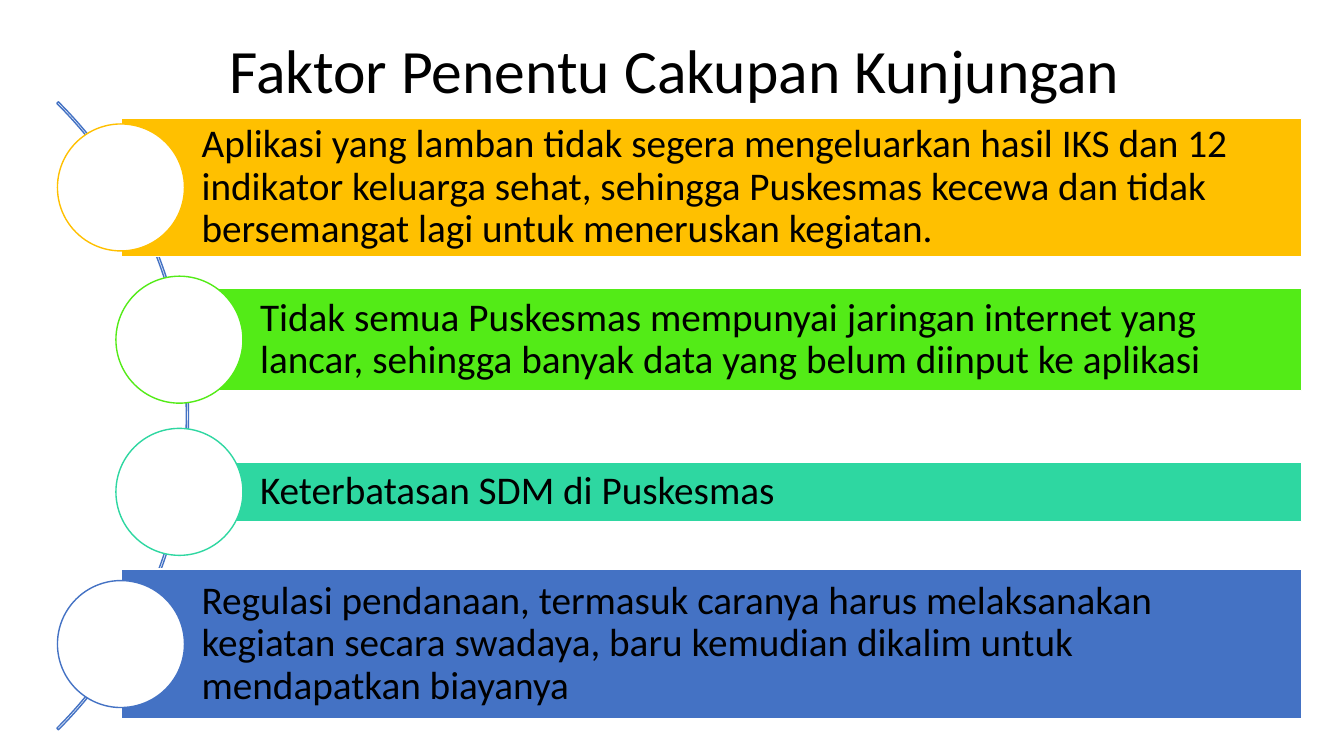
from pptx import Presentation
from pptx.dml.color import RGBColor
from pptx.enum import shapes, text
from pptx.util import Inches, Pt

BLACK = RGBColor(0x00, 0x00, 0x00)
WHITE = RGBColor(0xFF, 0xFF, 0xFF)
GOLD = RGBColor(0xFF, 0xC0, 0x00)
GREEN = RGBColor(0x53, 0xEB, 0x17)
TEAL = RGBColor(0x2E, 0xD7, 0xA1)
BLUE = RGBColor(0x44, 0x72, 0xC4)

BAR_RIGHT = 12.91
CIRCLE = 1.26
FIRST_Y, PITCH = 1.86, 1.51

# Colour, centre x of the circle, bar height, wording
FACTORS = [
    (GOLD, 1.2, 1.37,
     "Aplikasi yang lamban tidak segera mengeluarkan hasil IKS dan 12 indikator "
     "keluarga sehat, sehingga Puskesmas kecewa dan tidak bersemangat lagi untuk "
     "meneruskan kegiatan."),
    (GREEN, 1.78, 1.01,
     "Tidak semua Puskesmas mempunyai jaringan internet yang lancar, sehingga "
     "banyak data yang belum diinput ke aplikasi"),
    (TEAL, 1.78, 0.59, "Keterbatasan SDM di Puskesmas"),
    (BLUE, 1.2, 1.49,
     "Regulasi pendanaan, termasuk caranya harus melaksanakan kegiatan secara "
     "swadaya, baru kemudian dikalim untuk mendapatkan biayanya"),
]


def write(sp, wording, size, align, left=0.1, inset=0.1):
    tf = sp.text_frame
    tf.word_wrap = True
    tf.vertical_anchor = text.MSO_ANCHOR.MIDDLE
    tf.margin_left = Inches(left)
    tf.margin_right = tf.margin_top = tf.margin_bottom = Inches(inset)
    p = tf.paragraphs[0]
    p.alignment = align
    p.line_spacing = 0.9
    r = p.add_run()
    r.text = wording
    r.font.name = "Calibri"
    r.font.size = Pt(size)
    r.font.color.rgb = BLACK


def add_outlined(slide, kind, left, top, width, height, line, fill=None):
    sp = slide.shapes.add_shape(
        kind, Inches(left), Inches(top), Inches(width), Inches(height))
    sp.shadow.inherit = False
    if fill is None:
        sp.fill.background()
    else:
        sp.fill.solid()
        sp.fill.fore_color.rgb = fill
    sp.line.color.rgb = line
    sp.line.width = Pt(1)
    return sp


def add_title(slide, left, top, width, height):
    sp = slide.shapes.add_textbox(
        Inches(left), Inches(top), Inches(width), Inches(height))
    write(sp, "Faktor Penentu Cakupan Kunjungan", 44,
          text.PP_ALIGN.CENTER, inset=0.05)


def add_arc(slide, left, top, size):
    """Thin arc from 315 to 45 degrees that links the circles."""
    sp = add_outlined(slide, shapes.MSO_SHAPE.BLOCK_ARC,
                      left, top, size, size, BLUE)
    for i, value in enumerate((189, 27, 0.0025)):
        sp.adjustments[i] = value


def add_factor(slide, x, y, height, color, wording):
    """Bar with a circle centred on its left edge, at (x, y)."""
    bar = add_outlined(slide, shapes.MSO_SHAPE.RECTANGLE, x, y - height / 2,
                       BAR_RIGHT - x, height, WHITE, color)
    write(bar, wording, 28, text.PP_ALIGN.LEFT, left=0.8, inset=0.08)
    add_outlined(slide, shapes.MSO_SHAPE.OVAL, x - CIRCLE / 2, y - CIRCLE / 2,
                 CIRCLE, CIRCLE, color, WHITE)


def main():
    prs = Presentation()
    prs.slide_width, prs.slide_height = Inches(13.33), Inches(7.5)
    slide = prs.slides.add_slide(prs.slide_layouts[6])
    add_title(slide, 0.92, 0, 11.5, 1.45)
    add_arc(slide, -6.94, -0.28, 8.81)
    for i, (color, x, height, wording) in enumerate(FACTORS):
        add_factor(slide, x, FIRST_Y + i * PITCH, height, color, wording)
    prs.save("out.pptx")


if __name__ == "__main__":
    main()
